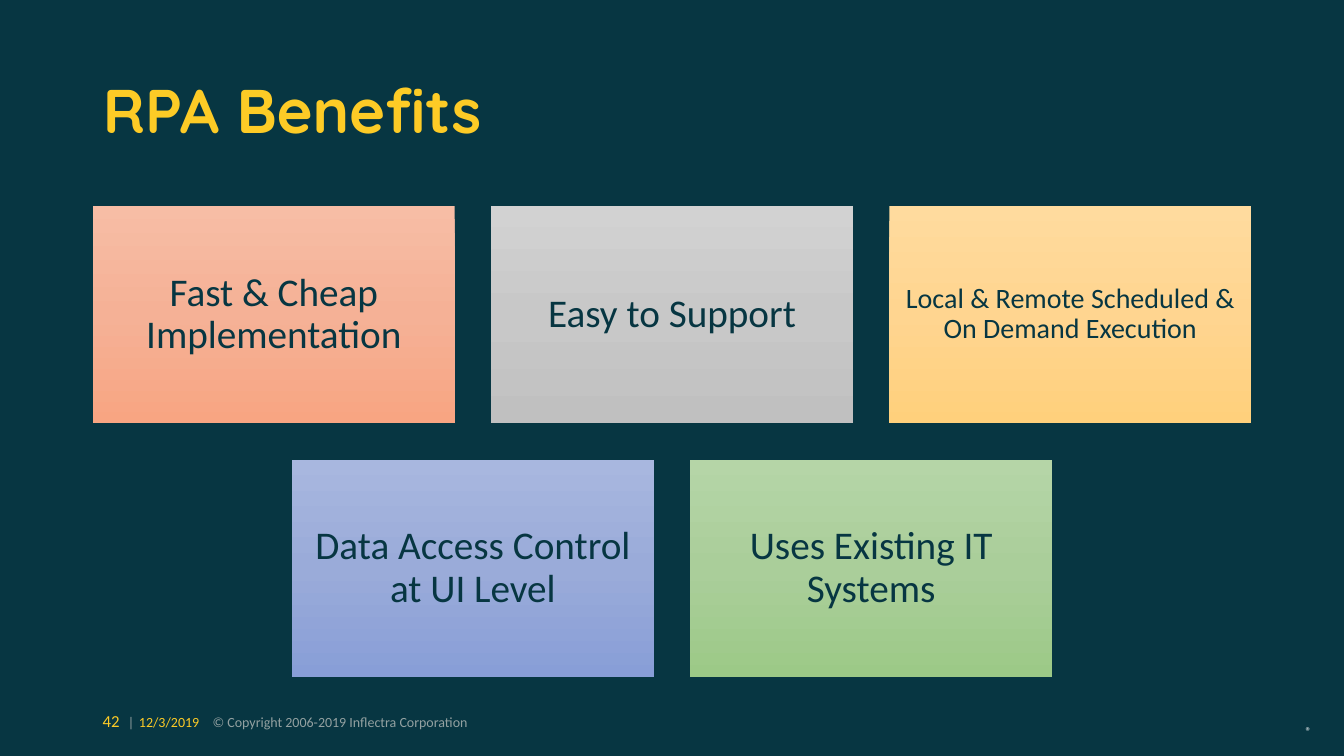
from copy import deepcopy

from lxml import etree
from pptx import Presentation
from pptx.dml.color import RGBColor
from pptx.enum.shapes import MSO_SHAPE
from pptx.enum.text import MSO_ANCHOR, MSO_AUTO_SIZE, PP_ALIGN
from pptx.oxml.ns import qn
from pptx.util import Inches, Pt

RECT = MSO_SHAPE.RECTANGLE
MIDDLE = MSO_ANCHOR.MIDDLE
LEFT, CENTER = PP_ALIGN.LEFT, PP_ALIGN.CENTER
NO_FIT = MSO_AUTO_SIZE.NONE

THEME = {
    "background": "073642", "accent": "FDCB26", "muted": "93A1A1", "white": "FFFFFF",
    "body_font": "Calibri", "title_font": "Quicksand",
    "title": 44, "card": 28, "card_small": 20, "number": 12, "footer": 10, "mark": 14,
    "orange": ("F7BDA5", "F5B196", "F8A582"),
    "grey": ("D2D2D2", "C8C8C8", "C0C0C0"),
    "yellow": ("FFDB9E", "FFD590", "FFD07C"),
    "blue": ("A8B7DF", "9AABD9", "889ED7"),
    "green": ("B5D5A7", "AACE9A", "9CC987"),
}
MARGINS = ("margin_left", "margin_top", "margin_right", "margin_bottom")

# Card grid, in inches; each row is centred on the same axis
CARD_W, CARD_H, GAP = 3.59, 2.16, 0.36
GRID_TOP, GRID_CENTER = 2.04, 6.665
ROWS = [
    [("Fast & Cheap Implementation", "orange", "card", 0.12),
     ("Easy to Support", "grey", "card", 0.12),
     ("Local & Remote Scheduled & On Demand Execution", "yellow", "card_small", 0.08)],
    [("Data Access Control at UI Level", "blue", "card", 0.12),
     ("Uses Existing IT Systems", "green", "card", 0.12)],
]
FOOTER = [
    ("42", "number", "accent"),
    ("\t|", "footer", "muted"),
    ("\t12/3/2019", "footer", "accent"),
    ("\t© Copyright 2006-2019 Inflectra Corporation", "footer", "muted"),
]
FOOTER_TABS = (0.25, 0.36, 1.09)


def add_run(p, text, size, color, font="body_font", bold=False):
    """Append a run whose size, colour and font are THEME keys."""
    r = p.add_run()
    r.text = text
    formats = {"size": Pt(THEME[size]), "name": THEME[font], "bold": bold}
    for name, value in formats.items():
        setattr(r.font, name, value)
    r.font.color.rgb = RGBColor.from_string(THEME[color])
    return r


def fill_gradient(s, colors):
    """Fill a shape from top to bottom with three evenly spaced colours."""
    s.fill.gradient()
    s.fill.gradient_angle = 270
    stops = s._element.spPr.find(".//" + qn("a:gsLst"))
    stops.insert(1, deepcopy(stops[0]))
    for i, (stop, color) in enumerate(zip(s.fill.gradient_stops, colors)):
        stop.position = i / 2
        stop.color.rgb = RGBColor.from_string(color)


prs = Presentation()
prs.slide_width, prs.slide_height = Inches(13.33), Inches(7.5)
slide = prs.slides.add_slide(prs.slide_layouts[5])
slide.background.fill.solid()
slide.background.fill.fore_color.rgb = RGBColor.from_string(THEME["background"])

# Title
title = slide.shapes.title
title.left, title.top, title.width, title.height = map(Inches, (0.92, 0.4, 11.5, 1.45))
tf = title.text_frame
tf.auto_size, tf.vertical_anchor = NO_FIT, MIDDLE
p = tf.paragraphs[0]
p.alignment, p.line_spacing = LEFT, 0.9
add_run(p, "RPA Benefits", "title", "accent", "title_font", True)

# Benefit cards
for row, cards in enumerate(ROWS):
    row_left = GRID_CENTER - (len(cards) * (CARD_W + GAP) - GAP) / 2
    for col, (text, colors, size, inset) in enumerate(cards):
        s = slide.shapes.add_shape(
            RECT, Inches(row_left + col * (CARD_W + GAP)),
            Inches(GRID_TOP + row * (CARD_H + GAP)), Inches(CARD_W), Inches(CARD_H))
        s.shadow.inherit = False
        s.line.fill.background()
        fill_gradient(s, THEME[colors])
        tf = s.text_frame
        tf.word_wrap, tf.vertical_anchor = True, MIDDLE
        for margin in MARGINS:
            setattr(tf, margin, Inches(inset))
        p = tf.paragraphs[0]
        p.alignment, p.line_spacing = CENTER, 0.9
        add_run(p, text, size, "background")

# Footer line
s = slide.shapes.add_textbox(*map(Inches, (0.92, 7, 7.47, 0.3)))
s.text_frame.word_wrap = True
p = s.text_frame.paragraphs[0]
tabs = etree.SubElement(p._p.get_or_add_pPr(), qn("a:tabLst"))
for stop in FOOTER_TABS:
    etree.SubElement(tabs, qn("a:tab"), pos=str(Inches(stop)), algn="l")
for text, size, color in FOOTER:
    add_run(p, text, size, color)

# Registered mark, raised
s = slide.shapes.add_textbox(*map(Inches, (12.95, 7.16, 0.18, 0.24)))
for margin in MARGINS:
    setattr(s.text_frame, margin, 0)
r = add_run(s.text_frame.paragraphs[0], "®", "mark", "white")
r.font._element.set("baseline", "30000")

prs.save("out.pptx")
